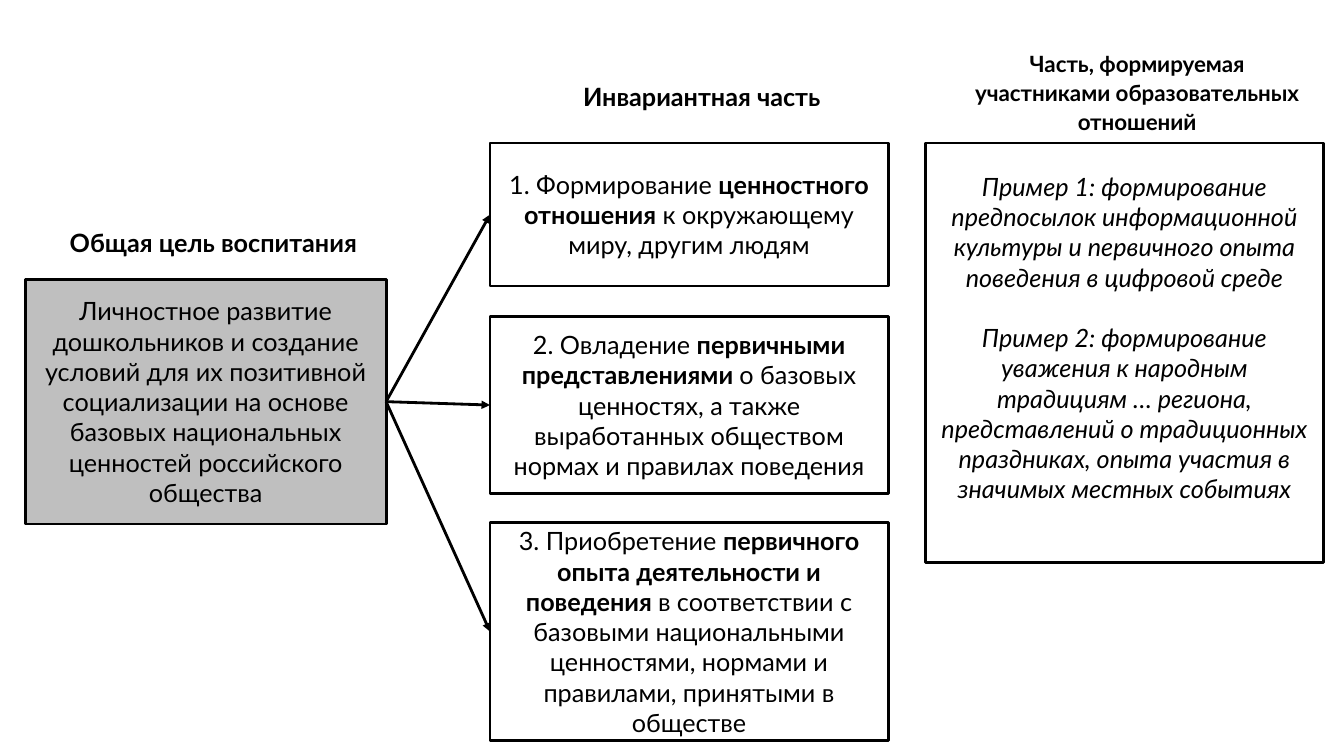
from lxml import etree
from pptx import Presentation
from pptx.dml.color import RGBColor
from pptx.enum.shapes import MSO_CONNECTOR, MSO_SHAPE
from pptx.enum.text import MSO_ANCHOR, PP_ALIGN
from pptx.oxml.ns import qn
from pptx.util import Pt

BLACK = RGBColor(0, 0, 0)
WHITE = RGBColor(255, 255, 255)
GREY = RGBColor(191, 191, 191)
RECT = MSO_SHAPE.RECTANGLE
STRAIGHT = MSO_CONNECTOR.STRAIGHT
CENTER = PP_ALIGN.CENTER
MIDDLE = MSO_ANCHOR.MIDDLE
LEFT, RIGHT = 1, 3
MID_X, MID_W = 350, 284.4
LAST_X = 661


def write(para, parts, size, style):
    para.alignment = CENTER
    for i, part in enumerate(parts):
        run = para.add_run()
        run.text = part
        look = {"name": "Lato", "size": Pt(size), "bold": i % 2 == 1, **style}
        for key, value in look.items():
            setattr(run.font, key, value)
        run.font.color.rgb = BLACK


def add_box(place, fill, paras, style):
    box = slide.shapes.add_shape(RECT, *map(Pt, place))
    box.shadow.inherit = False
    box.fill.solid()
    box.fill.fore_color.rgb = fill
    box.line.color.rgb = BLACK
    box.line.width = Pt(2)
    frame = box.text_frame
    frame.word_wrap = True
    frame.vertical_anchor = MIDDLE
    for i, parts in enumerate(paras):
        para = frame.add_paragraph() if i else frame.paragraphs[0]
        para.space_before = Pt(21.6 if i else 0)
        write(para, parts, 18, style)
    return box


deck = Presentation()
deck.slide_width, deck.slide_height = Pt(960), Pt(540)
slide = deck.slides.add_slide(deck.slide_layouts[6])

goal = add_box((18, 199.4, 257.8, 175), GREY, [[
    "Личностное развитие дошкольников и создание условий для их позитивной "
    "социализации на основе базовых национальных ценностей российского общества"
]], {})

tasks = [
    (102.2, 102.2, ["1. Формирование ", "ценностного отношения",
                    " к окружающему миру, другим людям"]),
    (226, 126.7, ["2. Овладение ", "первичными представлениями ",
                  "о базовых ценностях, а также выработанных обществом "
                  "нормах и правилах поведения"]),
    (373, 156.2, ["3. Приобретение ", "первичного опыта деятельности и поведения ",
                  "в соответствии с базовыми национальными ценностями, "
                  "нормами и правилами, принятыми в обществе"]),
]
for top, high, parts in tasks:
    task = add_box((MID_X, top, MID_W, high), WHITE, [parts], {})
    arrow = slide.shapes.add_connector(STRAIGHT, 0, 0, 0, 0)
    arrow.begin_connect(goal, RIGHT)
    arrow.end_connect(task, LEFT)
    arrow.line.color.rgb = BLACK
    arrow.line.width = Pt(2)
    tip = etree.SubElement(arrow.line._get_or_add_ln(), qn("a:tailEnd"))
    tip.set("type", "triangle")
    etree.SubElement(arrow._element.spPr, qn("a:effectLst"))

samples = add_box((LAST_X, 102.2, MID_W, 299.5), WHITE, [
    ["Пример 1: формирование предпосылок информационной культуры "
     "и первичного опыта поведения в цифровой среде"],
    ["Пример 2: формирование уважения к народным традициям … региона, "
     "представлений о традиционных праздниках, опыта участия "
     "в значимых местных событиях"],
], {"italic": True})
samples.text_frame.margin_bottom = Pt(25.2)

heads = [
    ((10.8, 157, 265, 31), 18, "Общая цель воспитания"),
    ((MID_X, 53.3, MID_W, 28.8), 18, "Инвариантная часть"),
    ((LAST_X, 31, MID_W, 67.7), 16,
     "Часть, формируемая участниками образовательных отношений"),
]
for place, size, text in heads:
    frame = slide.shapes.add_textbox(*map(Pt, place)).text_frame
    frame.word_wrap = True
    frame.margin_left = Pt(25.2)
    para = frame.paragraphs[0]
    para.line_spacing = 1.07
    write(para, [text], size, {"bold": True})

deck.save("out.pptx")
